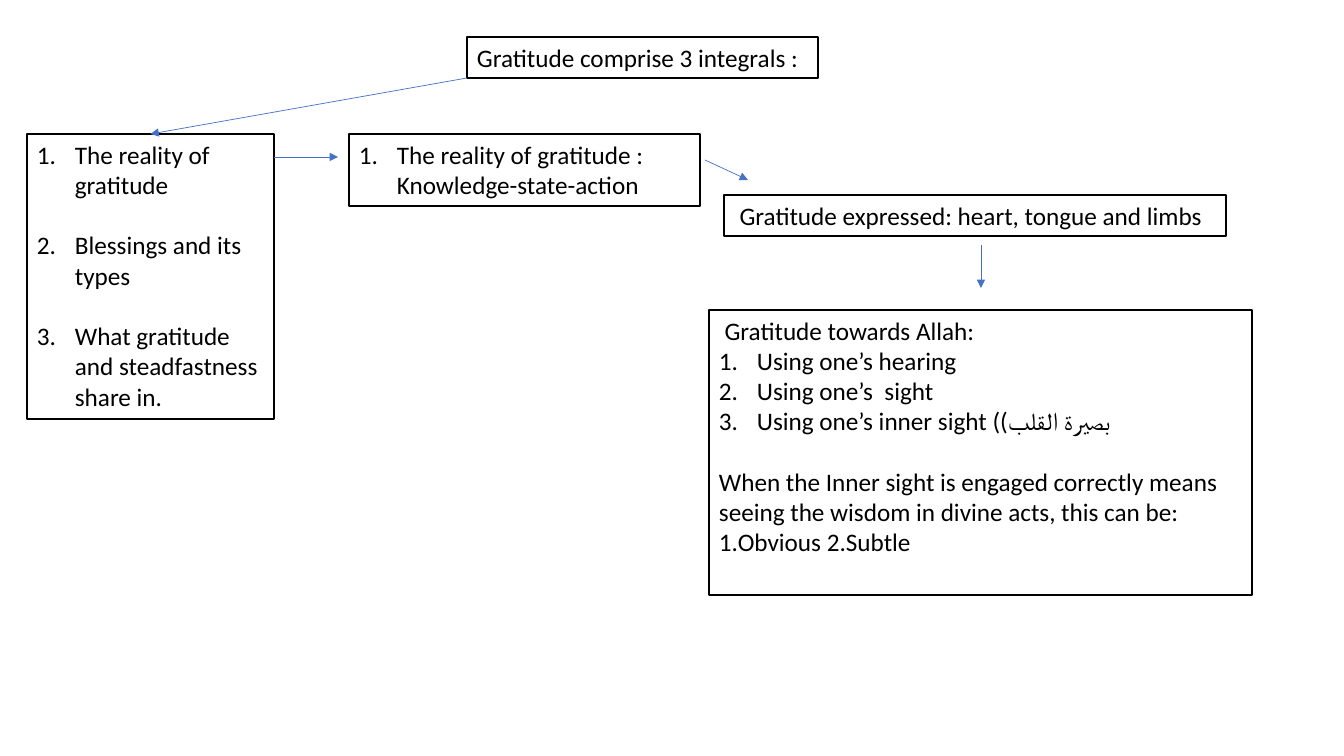
from lxml import etree
from pptx import Presentation
from pptx import util as u
from pptx.dml import color
from pptx.enum import shapes, text
from pptx.oxml import ns

SCALE = 914400 / 100.8
COLOURS = {"paper": "FFFFFF", "ink": "000000", "arrow": "4472C4"}


def px(length):
    return u.Emu(round(length * SCALE))


def rgb(name):
    return color.RGBColor.from_string(COLOURS[name])


def write(paragraph, words, size=18, font="Calibri", ink="ink", numbered=False, gap=0):
    run = paragraph.add_run()
    run.text = words
    run.font.size = u.Pt(size)
    run.font.name = font
    run.font.color.rgb = rgb(ink)
    paragraph.alignment = text.PP_ALIGN.LEFT
    paragraph.space_before = u.Pt(gap)
    if numbered:
        properties = paragraph._p.get_or_add_pPr()
        properties.set("marL", str(px(38)))
        properties.set("indent", str(-px(38)))
        etree.SubElement(properties, ns.qn("a:buFont"), typeface="+mj-lt")
        etree.SubElement(properties, ns.qn("a:buAutoNum"), type="arabicPeriod")


class Diagram:
    blank_line = 21.6
    box_line = 1
    arrow_line = 0.5

    def __init__(self, slide):
        self.slide = slide

    def box(self, left, top, width, height, lines, wrap=True):
        box = self.slide.shapes.add_textbox(px(left), px(top), px(width), px(height))
        box.fill.solid()
        box.fill.fore_color.rgb = rgb("paper")
        box.line.color.rgb = rgb("ink")
        box.line.width = u.Pt(self.box_line)
        frame = box.text_frame
        frame.word_wrap = wrap
        frame.auto_size = text.MSO_AUTO_SIZE.NONE
        frame.vertical_anchor = text.MSO_ANCHOR.TOP
        for index, (words, style) in enumerate(lines):
            paragraph = frame.add_paragraph() if index else frame.paragraphs[0]
            write(paragraph, words, **style)
        return box

    def arrow(self, x1, y1, x2, y2, target=None, side=0):
        arrow = self.slide.shapes.add_connector(
            shapes.MSO_CONNECTOR.STRAIGHT, px(x1), px(y1), px(x2), px(y2))
        if target is not None:
            arrow.end_connect(target, side)
        arrow.line.color.rgb = rgb("arrow")
        arrow.line.width = u.Pt(self.arrow_line)
        etree.SubElement(arrow.line._get_or_add_ln(), ns.qn("a:tailEnd"), type="triangle")
        etree.SubElement(arrow._element.spPr, ns.qn("a:effectLst"))
        return arrow


def main():
    deck = Presentation()
    deck.slide_width, deck.slide_height = px(1344), px(756)
    diagram = Diagram(deck.slides.add_slide(deck.slide_layouts[6]))

    plain = {}
    item = {"numbered": True}
    spaced = {"gap": diagram.blank_line}

    integrals = diagram.box(27, 134, 247, 285, [
        ("The reality of gratitude", item),
        ("Blessings and its types", item | spaced),
        ("What gratitude and steadfastness share in.", item | spaced),
    ])
    diagram.box(467, 37, 351, 41, [("Gratitude comprise 3 integrals :", plain)], wrap=False)
    diagram.arrow(467, 78, 151, 134, target=integrals)
    diagram.arrow(705, 160, 748, 180)
    diagram.box(349, 134, 351, 72, [
        ("The reality of gratitude : Knowledge-state-action", item),
    ])
    diagram.arrow(274, 157, 338, 157)
    diagram.box(724, 195, 502, 41, [
        (" Gratitude expressed: heart, tongue and limbs", plain),
    ])
    diagram.arrow(981, 245, 981, 288)
    diagram.box(709, 310, 543, 285, [
        (" Gratitude towards Allah:", plain),
        ("Using one’s hearing", item),
        ("Using one’s  sight", item),
        ("Using one’s inner sight ((بصيرة القلب", item),
        ("When the Inner sight is engaged correctly means seeing the wisdom "
         "in divine acts, this can be:", spaced),
        ("1.Obvious 2.Subtle", plain),
    ])
    deck.save("out.pptx")


if __name__ == "__main__":
    main()
